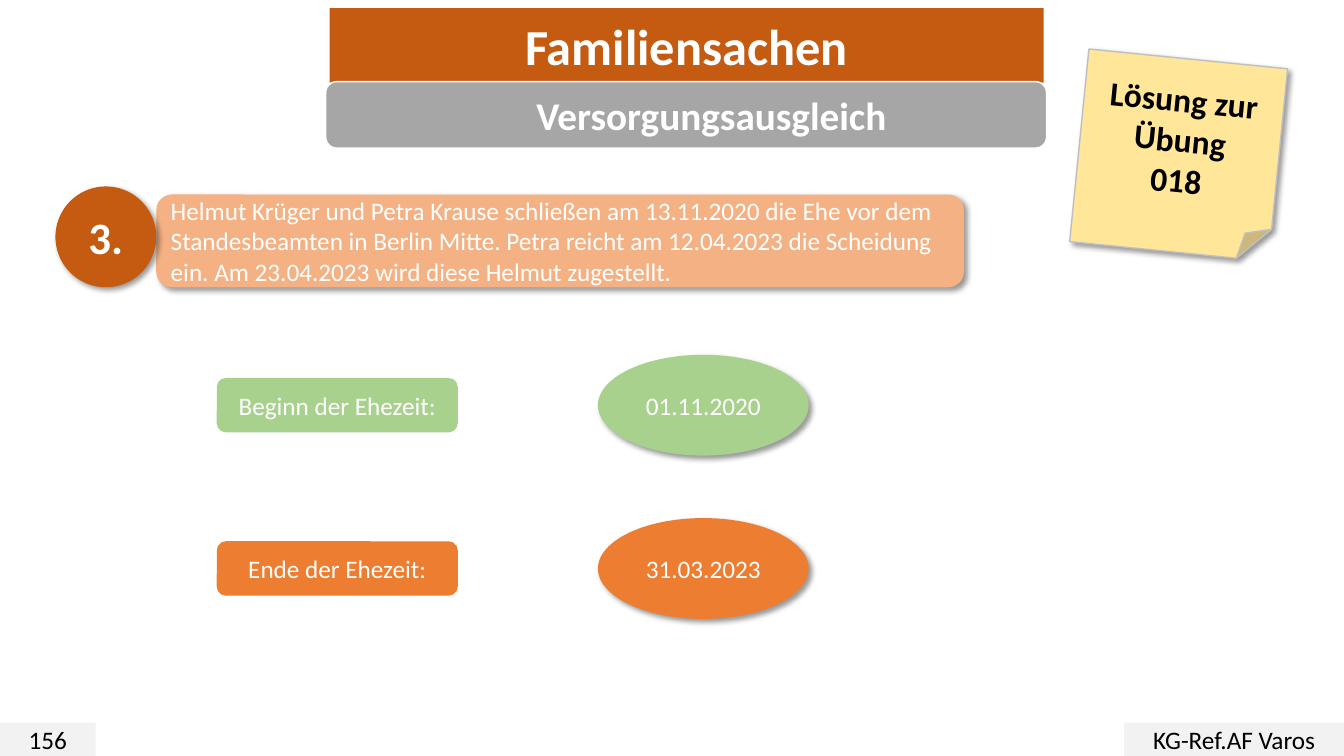
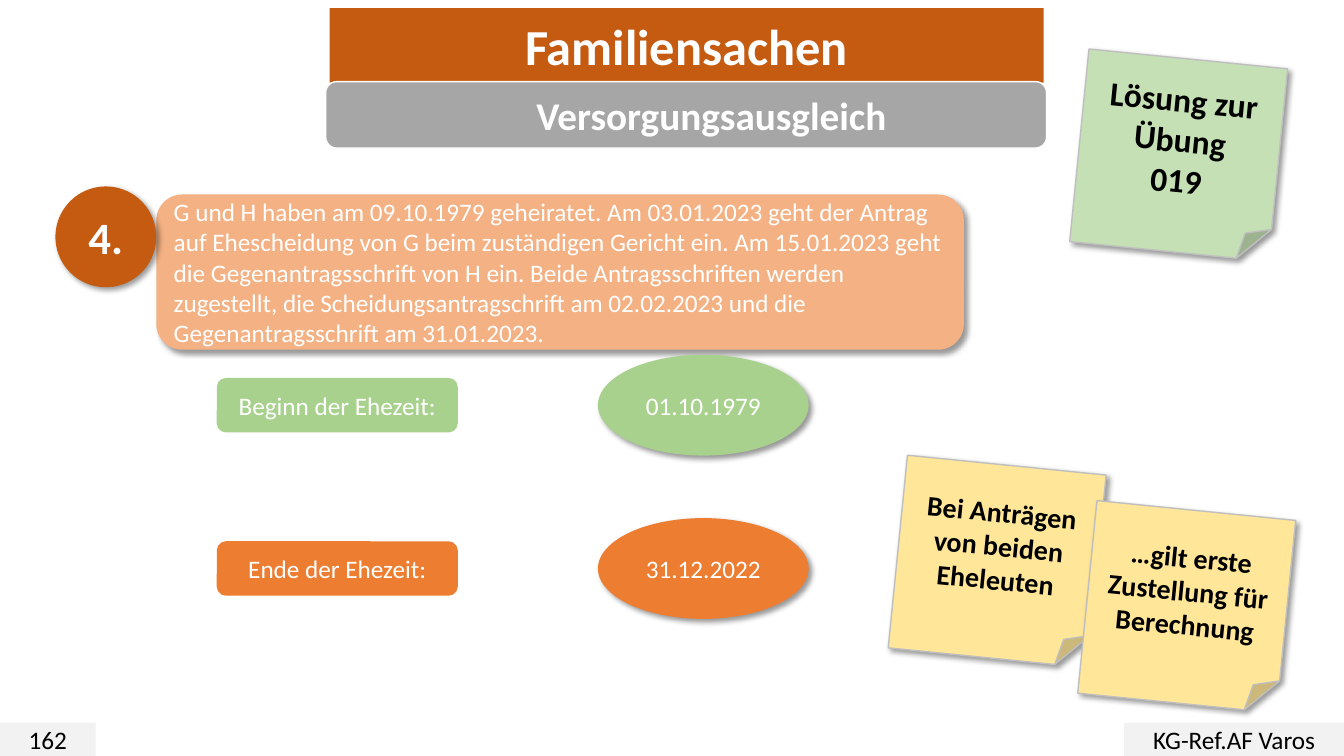
from dataclasses import dataclass

from lxml.etree import SubElement
from pptx import Presentation
from pptx.dml.color import RGBColor
from pptx.enum.shapes import MSO_SHAPE
from pptx.enum.text import MSO_ANCHOR, MSO_AUTO_SIZE, PP_ALIGN
from pptx.oxml.ns import qn
from pptx.util import Inches, Pt


@dataclass(frozen=True)
class Theme:
    font: str = "Calibri"
    white: str = "FFFFFF"
    black: str = "000000"
    rust: str = "C55A11"
    grey: str = "A6A6A6"
    footer: str = "F2F2F2"
    peach: str = "F4B183"
    green: str = "A9D18E"
    orange: str = "ED7D31"
    yellow: str = "FFE699"
    mint: str = "C5E0B4"
    edge: str = "BFBFBF"
    title_size: int = 36
    number_size: int = 32
    subtitle_size: int = 28
    heading_size: int = 24
    note_size: int = 20
    text_size: int = 18


class LessonDeck:
    def __init__(self, theme):
        self.theme = theme
        self.deck = Presentation()
        self.deck.slide_width = Inches(13.33)
        self.deck.slide_height = Inches(7.5)
        self.page = None

    def new_page(self, number):
        theme = self.theme
        self.page = self.deck.slides.add_slide(self.deck.slide_layouts[5])
        self.title("Familiensachen")
        self.box(MSO_SHAPE.RECTANGLE, (0, 7.17, 0.95, 0.33), number, theme.footer, color=theme.black)
        self.box(MSO_SHAPE.RECTANGLE, (11.15, 7.17, 2.18, 0.33), "KG-Ref.AF Varos", theme.footer,
                 color=theme.black)
        self.subtitle("Versorgungsausgleich")

    def title(self, text):
        title = self.page.shapes.title
        title.left, title.top, title.width, title.height = map(Inches, (3.27, 0.08, 7.08, 0.74))
        geometry = SubElement(title._element.spPr, qn("a:prstGeom"), prst="roundRect")
        SubElement(geometry, qn("a:avLst"))
        self.paint(title, self.theme.rust)
        self.set_text(title, text, self.theme.title_size, bold=True)

    def subtitle(self, text):
        theme = self.theme
        band = self.box(MSO_SHAPE.ROUNDED_RECTANGLE, (3.23, 0.81, 7.15, 0.66), text, theme.grey,
                        theme.subtitle_size, bold=True, line=theme.white)
        para = band.text_frame.paragraphs[0]
        para.level = 1
        para._p.get_or_add_pPr().set("marL", str(Inches(0.5)))

    def box(self, kind, place, text, fill, size=None, color=None, bold=False,
            align=PP_ALIGN.CENTER, line=None, shadow=False, parent=None):
        shapes = (parent or self.page).shapes
        box = shapes.add_shape(kind, *map(Inches, place))
        box.shadow.inherit = False
        self.paint(box, fill, line)
        if shadow:
            self.cast_shadow(box)
        self.set_text(box, text, size or self.theme.text_size, color, bold, align)
        return box

    def paint(self, shape, fill, line=None):
        shape.fill.solid()
        shape.fill.fore_color.rgb = RGBColor.from_string(fill)
        if line:
            shape.line.color.rgb = RGBColor.from_string(line)
            shape.line.width = Pt(1)
        else:
            shape.line.fill.background()

    def cast_shadow(self, shape):
        effects = shape._element.spPr.find(qn("a:effectLst"))
        shadow = SubElement(effects, qn("a:outerShdw"), blurRad=str(Pt(4)), dist=str(Pt(3)),
                            dir=str(45 * 60000), algn="tl", rotWithShape="0")
        color = SubElement(shadow, qn("a:srgbClr"), val=self.theme.black)
        SubElement(color, qn("a:alpha"), val="40000")

    def set_text(self, shape, text, size, color=None, bold=False, align=PP_ALIGN.CENTER):
        frame = shape.text_frame
        frame.text = text
        frame.word_wrap = True
        frame.auto_size = MSO_AUTO_SIZE.NONE
        frame.vertical_anchor = MSO_ANCHOR.MIDDLE
        for para in frame.paragraphs:
            para.alignment = align
            para.font.name = self.theme.font
            para.font.size = Pt(size)
            para.font.bold = bold
            para.font.color.rgb = RGBColor.from_string(color or self.theme.white)

    def sticky_note(self, left, top, text, fill, size):
        note = self.box(MSO_SHAPE.FOLDED_CORNER, (left, top, 1.98, 1.92), text, fill, size,
                        self.theme.black, bold=True, line=self.theme.edge, shadow=True)
        note.rotation = 5.7

    def case(self, number, text, height):
        theme = self.theme
        group = self.page.shapes.add_group_shape()
        self.box(MSO_SHAPE.ROUNDED_RECTANGLE, (1.55, 1.93, 8.01, height), text, theme.peach,
                 align=PP_ALIGN.LEFT, shadow=True, parent=group)
        self.box(MSO_SHAPE.OVAL, (0.55, 1.85, 1, 1), number, theme.rust, theme.number_size,
                 bold=True, shadow=True, parent=group)

    def marriage_period(self, begin, end):
        rows = (("Beginn der Ehezeit:", begin, self.theme.green),
                ("Ende der Ehezeit:", end, self.theme.orange))
        for index, (label, date, fill) in enumerate(rows):
            top = 3.52 + index * 1.62
            self.box(MSO_SHAPE.ROUNDED_RECTANGLE, (2.15, top + 0.23, 2.39, 0.54), label, fill)
            self.box(MSO_SHAPE.OVAL, (5.93, top, 2.09, 1), date, fill, shadow=True)

    def solution(self, page_number, exercise, note_fill, case_number, case_text, case_height,
                 begin, end):
        self.new_page(page_number)
        self.sticky_note(10.7, 0.58, f"Lösung zur\nÜbung\n{exercise}", note_fill,
                         self.theme.heading_size)
        self.case(case_number, case_text, case_height)
        self.marriage_period(begin, end)


def main():
    theme = Theme()
    lesson = LessonDeck(theme)
    lesson.solution(
        "156", "018", theme.yellow, "3.",
        "Helmut Krüger und Petra Krause schließen am 13.11.2020 die Ehe vor dem "
        "Standesbeamten in Berlin Mitte. Petra reicht am 12.04.2023 die Scheidung ein. "
        "Am 23.04.2023 wird diese Helmut zugestellt.",
        0.92, "01.11.2020", "31.03.2023")
    lesson.solution(
        "162", "019", theme.mint, "4.",
        "G und H haben am 09.10.1979 geheiratet. Am 03.01.2023 geht der Antrag auf "
        "Ehescheidung von G beim zuständigen Gericht ein. Am 15.01.2023 geht die "
        "Gegenantragsschrift von H ein. Beide Antragsschriften werden zugestellt, die "
        "Scheidungsantragschrift am 02.02.2023 und die Gegenantragsschrift am 31.01.2023.",
        1.54, "01.10.1979", "31.12.2022")
    lesson.sticky_note(8.9, 4.61, "Bei Anträgen von beiden Eheleuten", theme.yellow, theme.note_size)
    lesson.sticky_note(10.78, 5.06, "…gilt erste Zustellung für Berechnung", theme.yellow,
                       theme.note_size)
    lesson.deck.save("out.pptx")


if __name__ == "__main__":
    main()
